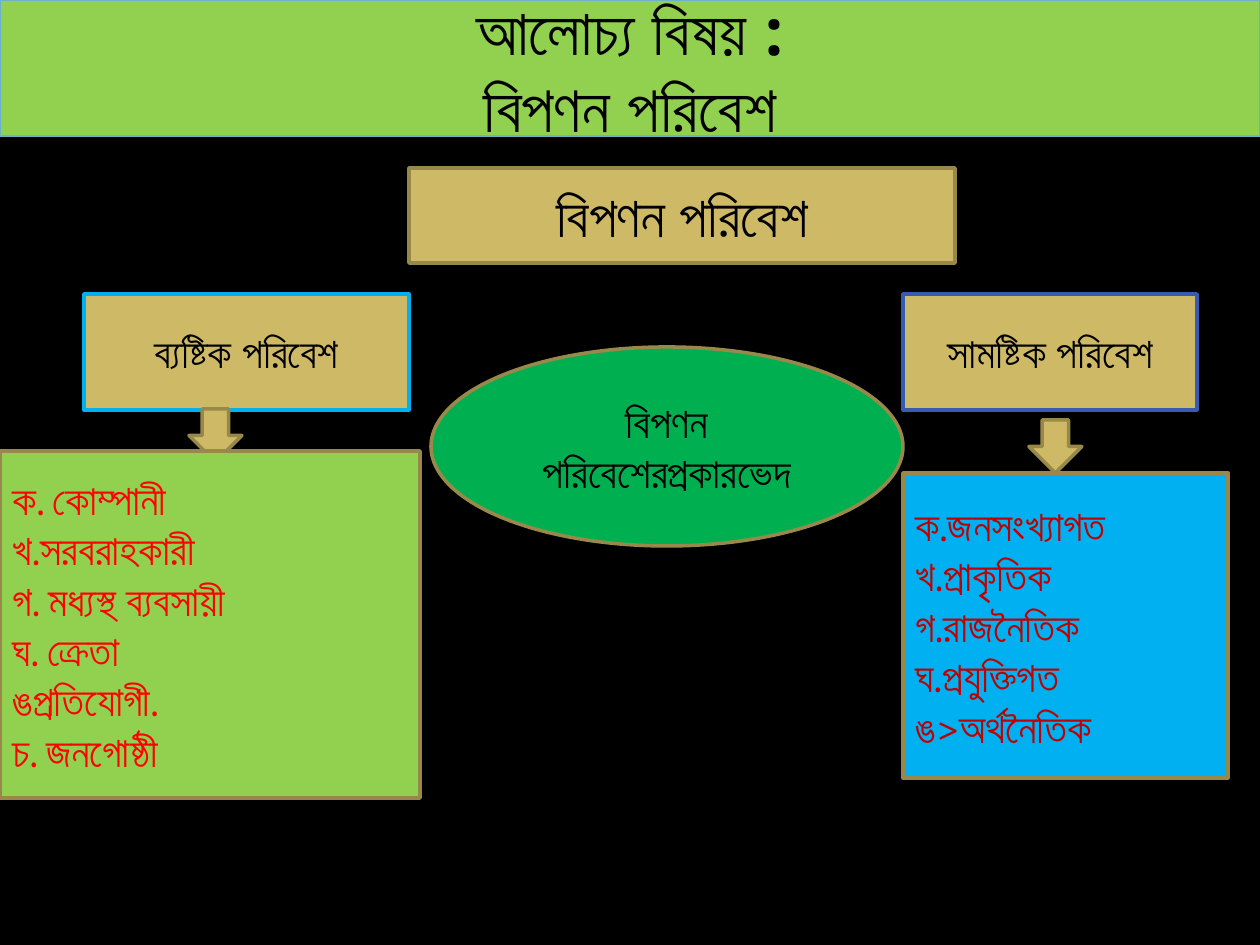
from pptx import Presentation
from pptx.dml.color import RGBColor
from pptx.enum.shapes import MSO_SHAPE as Preset
from pptx.enum.text import MSO_ANCHOR as Anchor, PP_ALIGN as Align
from pptx.util import Pt

EMU_PER_PX = 914400 / 126

BLACK = RGBColor(0x00, 0x00, 0x00)
LIME = RGBColor(0x92, 0xD0, 0x50)
GREEN = RGBColor(0x00, 0xB0, 0x50)
GOLD = RGBColor(0xCE, 0xB9, 0x66)
BRONZE = RGBColor(0x98, 0x89, 0x4B)
SKY = RGBColor(0x00, 0xB0, 0xF0)
INDIGO = RGBColor(0x37, 0x5B, 0xB0)
TEAL = RGBColor(0x6B, 0xB1, 0xC9)
RED = RGBColor(0xFF, 0x00, 0x00)
CRIMSON = RGBColor(0xC0, 0x00, 0x00)

MICRO_FACTORS = ["ক. কোম্পানী", "খ.সরবরাহকারী", "গ. মধ্যস্থ ব্যবসায়ী",
                 "ঘ. ক্রেতা", "ঙপ্রতিযোগী.", "চ. জনগোষ্ঠী"]
MACRO_FACTORS = ["ক.জনসংখ্যাগত", "খ.প্রাকৃতিক", "গ.রাজনৈতিক",
                 "ঘ.প্রযুক্তিগত", "ঙ>অর্থনৈতিক"]


def px(length):
    return round(length * EMU_PER_PX)


def add_figure(slide, preset, box, fill, outline, weight=2):
    figure = slide.shapes.add_shape(preset, *map(px, box))
    figure.shadow.inherit = False
    figure.fill.solid()
    figure.fill.fore_color.rgb = fill
    figure.line.color.rgb = outline
    figure.line.width = Pt(weight)
    return figure


def write(figure, lines, size=24, color=BLACK, align=Align.CENTER,
          font="Cambria", bold=None):
    frame = figure.text_frame
    frame.word_wrap = True
    frame.vertical_anchor = Anchor.MIDDLE
    frame.text = "\n".join(lines)
    for paragraph in frame.paragraphs:
        paragraph.alignment = align
        for run in paragraph.runs:
            run.font.size = Pt(size)
            run.font.name = font
            run.font.bold = bold
            run.font.color.rgb = color


def add_title(slide, text):
    banner = add_figure(slide, Preset.RECTANGLE, (0, 0, 1260, 136), LIME, TEAL, 0.75)
    write(banner, [text], size=36.9, font="Open Sans", bold=True)


def add_label(slide, box, text, outline=BRONZE, size=24, preset=Preset.RECTANGLE, fill=GOLD):
    label = add_figure(slide, preset, box, fill, outline)
    write(label, [text], size=size)


def add_factor_list(slide, box, factors, fill, color):
    panel = add_figure(slide, Preset.RECTANGLE, box, fill, BRONZE)
    write(panel, factors, color=color, align=Align.LEFT)


def add_down_arrow(slide, left, top):
    add_figure(slide, Preset.DOWN_ARROW, (left, top, 53, 53), GOLD, BRONZE)


def main():
    deck = Presentation()
    deck.slide_width, deck.slide_height = px(1260), px(945)
    slide = deck.slides.add_slide(deck.slide_layouts[6])
    slide.background.fill.solid()
    slide.background.fill.fore_color.rgb = BLACK

    add_title(slide, "আলোচ্য বিষয় :\vবিপণন পরিবেশ")
    add_label(slide, (409, 168, 546, 95), "বিপণন পরিবেশ", size=32)
    add_label(slide, (84, 294, 325, 116), "ব্যষ্টিক পরিবেশ", SKY)
    add_label(slide, (903, 294, 294, 116), "সামষ্টিক পরিবেশ", INDIGO)
    add_down_arrow(slide, 189, 409)
    add_down_arrow(slide, 1029, 420)
    add_factor_list(slide, (0, 451, 420, 347), MICRO_FACTORS, LIME, RED)
    add_factor_list(slide, (903, 473, 325, 305), MACRO_FACTORS, SKY, CRIMSON)
    add_label(slide, (431, 347, 472, 199), "বিপণন পরিবেশেরপ্রকারভেদ",
              preset=Preset.OVAL, fill=GREEN)
    deck.save("out.pptx")


if __name__ == "__main__":
    main()
